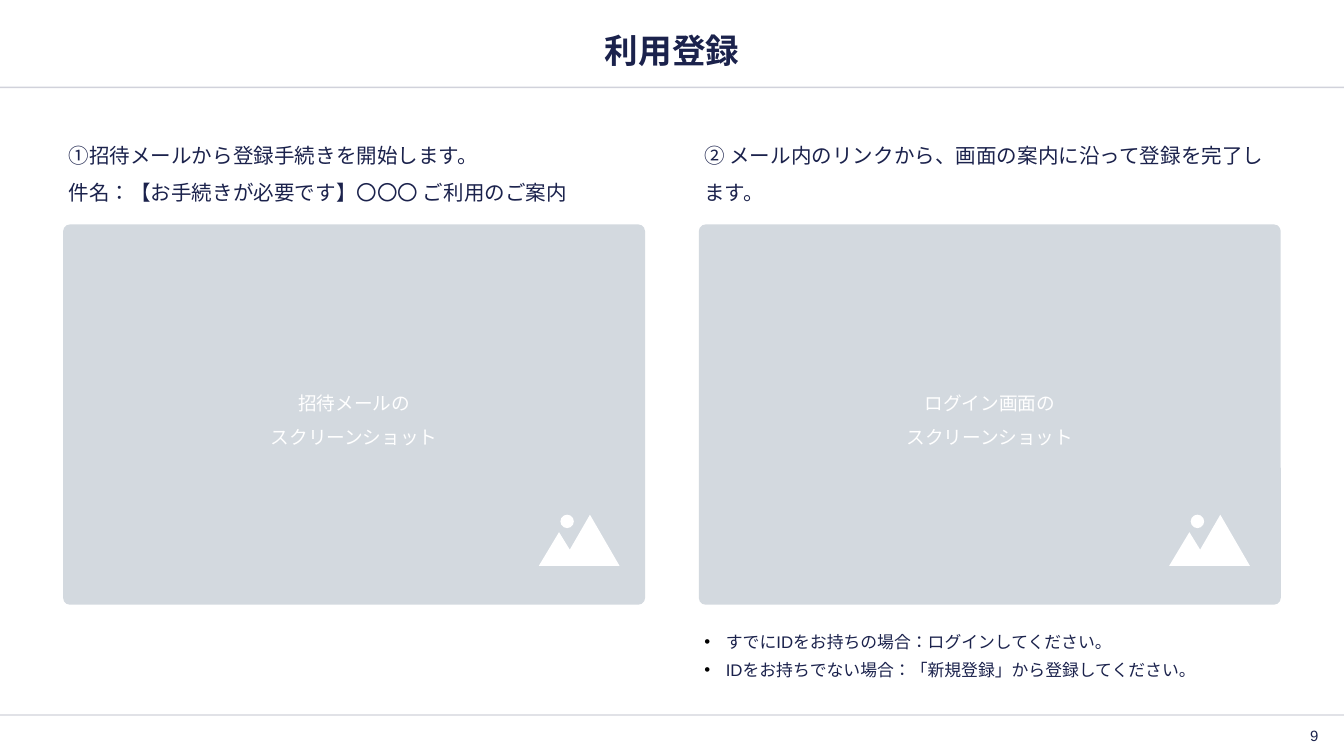
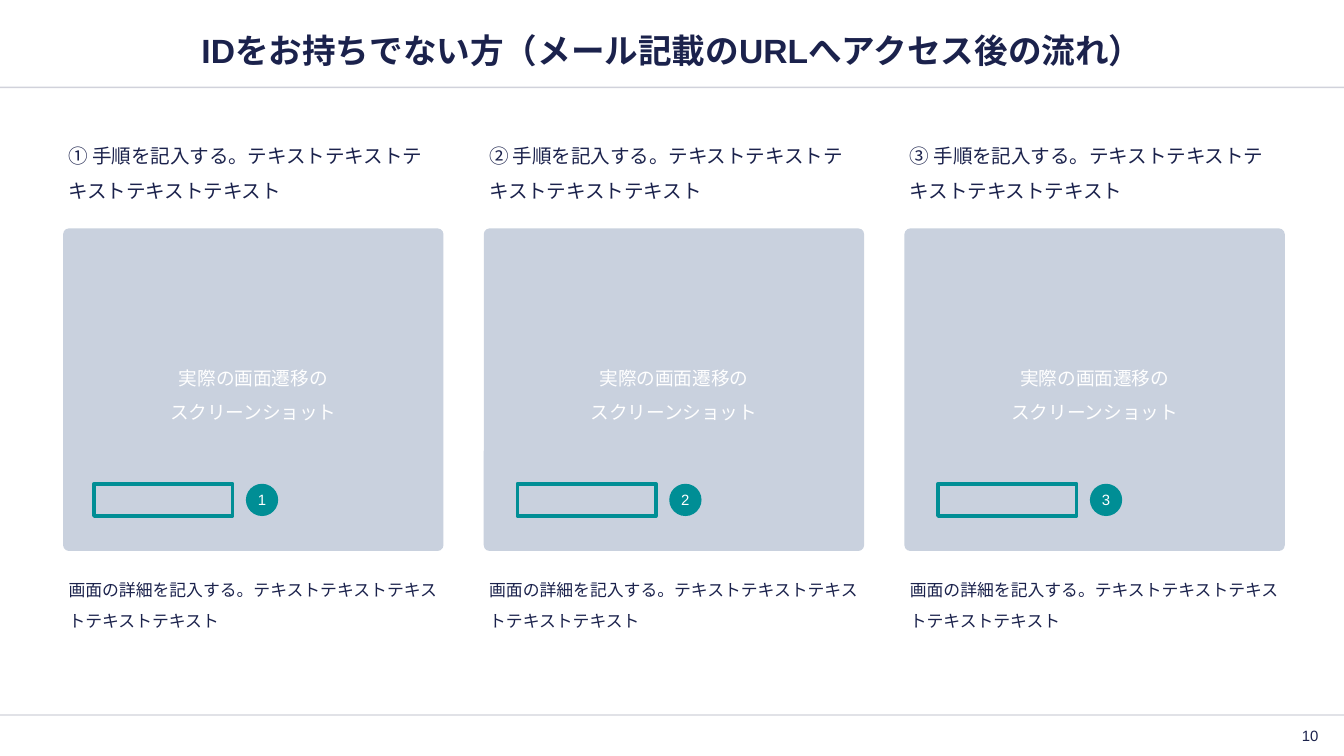
"""Build two sign-up guide slides with screenshot panels and numbered steps."""
from lxml.etree import SubElement
from pptx import Presentation
from pptx.dml.color import RGBColor
from pptx.enum.lang import MSO_LANGUAGE_ID
from pptx.enum.shapes import MSO_CONNECTOR, MSO_SHAPE
from pptx.enum.text import MSO_ANCHOR, MSO_AUTO_SIZE, PP_ALIGN
from pptx.oxml.ns import qn
from pptx.util import Inches, Pt

INK = {"navy": "1B224C", "white": "FFFFFF", "gray": "D3D9DF",
       "blue": "C9D1DE", "teal": "008E95", "black": "000000"}
FONT = "Arial"
EDGE = 0.47

SIGNUP = {
    "title": "利用登録",
    "page": "9",
    "steps": [
        (["①招待メールから登録手続きを開始します。",
          "件名：【お手続きが必要です】〇〇〇 ご利用のご案内"],
         ["招待メールの", "スクリーンショット"], 4.01),
        (["② メール内のリンクから、画面の案内に沿って登録を完了します。"],
         ["ログイン画面の", "スクリーンショット"], 8.7),
    ],
    "notes": ["すでにIDをお持ちの場合：ログインしてください。",
              "IDをお持ちでない場合：「新規登録」から登録してください。"],
}
FLOW = {
    "title": "IDをお持ちでない方（メール記載のURLへアクセス後の流れ）",
    "page": "10",
    "step": "手順を記入する。テキストテキストテキストテキストテキスト",
    "panel": ["実際の画面遷移の", "スクリーンショット"],
    "detail": "画面の詳細を記入する。テキストテキストテキストテキストテキスト",
    "marks": [("①", 0.7), ("②", 3.85), ("③", 6.98)],
}
PEAKS = [(0.38, 0), (0.6, 0.38), (0, 0.38), (0.15, 0.13), (0.23, 0.26)]


def color(name):
    return RGBColor.from_string(INK[name])


def place(shape, box):
    shape.left, shape.top, shape.width, shape.height = map(Inches, box)


def bullet(para):
    props = para._p.get_or_add_pPr()
    props.set("marL", str(Inches(0.16)))
    props.set("indent", str(-Inches(0.16)))
    tint = SubElement(props, qn("a:buClr"))
    SubElement(tint, qn("a:srgbClr"), val=INK["black"])
    SubElement(props, qn("a:buChar"), char="•")


def write(shape, lines, size, ink="navy", align=PP_ALIGN.LEFT, space=1.5,
          anchor=MSO_ANCHOR.TOP, pad=0.04, bold=False, after=0, dots=False):
    frame = shape.text_frame
    frame.word_wrap = True
    frame.auto_size = MSO_AUTO_SIZE.NONE
    frame.vertical_anchor = anchor
    frame.margin_left = frame.margin_right = Inches(pad)
    frame.margin_top = frame.margin_bottom = Inches(pad)
    frame.text = "\n".join(lines)
    for para in frame.paragraphs:
        if dots:
            bullet(para)
        para.alignment = align
        para.line_spacing = space
        para.space_before = Pt(0)
        para.space_after = Pt(after)
        para.font.name = FONT
        para.font.size = Pt(size)
        para.font.bold = bold
        para.font.color.rgb = color(ink)
        para.font.language_id = MSO_LANGUAGE_ID.JAPANESE


def text(slide, box, lines, size, **style):
    write(slide.shapes.add_textbox(*map(Inches, box)), lines, size, **style)


def paint(shape, fill):
    shape.shadow.inherit = False
    shape.fill.solid()
    shape.fill.fore_color.rgb = color(fill)
    shape.line.fill.background()


def solid(slide, kind, box, fill):
    shape = slide.shapes.add_shape(kind, *map(Inches, box))
    paint(shape, fill)
    return shape


def panel(slide, box, lines, fill):
    shape = solid(slide, MSO_SHAPE.ROUNDED_RECTANGLE, box, fill)
    shape.adjustments[0] = 0.018
    write(shape, lines, 10, ink="white", align=PP_ALIGN.CENTER,
          anchor=MSO_ANCHOR.MIDDLE)


def rule(slide, top):
    line = slide.shapes.add_connector(
        MSO_CONNECTOR.STRAIGHT, 0, Inches(top), Inches(10), Inches(top))
    line.line.width = Pt(0.75)
    line.line.color.rgb = color("navy")
    props = line._element.spPr
    SubElement(next(props.iter(qn("a:srgbClr"))), qn("a:alpha"), val="20000")
    SubElement(props, qn("a:effectLst"))


def icon(slide, left, top):
    dots = [(Inches(left + x), Inches(top + y)) for x, y in PEAKS]
    pen = slide.shapes.build_freeform(*dots[0])
    pen.add_line_segments(dots[1:], close=True)
    paint(pen.convert_to_shape(), "white")
    solid(slide, MSO_SHAPE.OVAL, (left + 0.16, top, 0.1, 0.1), "white")


def start(deck, layout, data):
    slide = deck.slides.add_slide(deck.slide_layouts.get_by_name(layout))
    for top in (0.65, 5.32):
        rule(slide, top)
    text(slide, (9.46, 5.37, 0.39, 0.2), [data["page"]], 8, space=1,
         align=PP_ALIGN.RIGHT, anchor=MSO_ANCHOR.MIDDLE)
    title = slide.shapes.title
    place(title, (EDGE, 0.18, 9.06, 0.39))
    write(title, [data["title"]], 18, align=PP_ALIGN.CENTER, space=1,
          anchor=MSO_ANCHOR.MIDDLE, bold=True)
    return slide


def signup(deck):
    slide = start(deck, "Title and Content", SIGNUP)
    wide, step = 4.33, 4.73
    for i, (head, label, mark) in enumerate(SIGNUP["steps"]):
        left = EDGE + i * step
        text(slide, (left, 0.93, wide, 0.59), head, 11)
        panel(slide, (left, 1.67, wide, 2.83), label, "gray")
        icon(slide, mark, 3.83)
    body = slide.placeholders[1]
    place(body, (EDGE + step, 4.66, wide, 0.39))
    write(body, SIGNUP["notes"], 9, space=1, after=4, dots=True)


def flow(deck):
    slide = start(deck, "Title Only", FLOW)
    wide, step = 2.83, 3.13
    for i, (sign, mark) in enumerate(FLOW["marks"]):
        left = EDGE + i * step
        text(slide, (left, 0.94, wide, 0.59), [f"{sign} {FLOW['step']}"], 10.5)
        panel(slide, (left, 1.7, wide, 2.4), FLOW["panel"], "blue")
        text(slide, (left, 4.2, wide, 0.59), [FLOW["detail"]], 9)
        frame = solid(slide, MSO_SHAPE.RECTANGLE, (mark, 3.6, 1.03, 0.24), "blue")
        frame.fill.background()
        frame.line.color.rgb = color("teal")
        frame.line.width = Pt(2)
        badge = solid(slide, MSO_SHAPE.OVAL, (mark + 1.13, 3.6, 0.24, 0.24), "teal")
        write(badge, [str(i + 1)], 8, ink="white", align=PP_ALIGN.CENTER,
              space=1, anchor=MSO_ANCHOR.MIDDLE, pad=0)


def main():
    deck = Presentation()
    deck.slide_width = Inches(10)
    deck.slide_height = deck.slide_width * 9 // 16
    signup(deck)
    flow(deck)
    deck.save("out.pptx")


if __name__ == "__main__":
    main()
